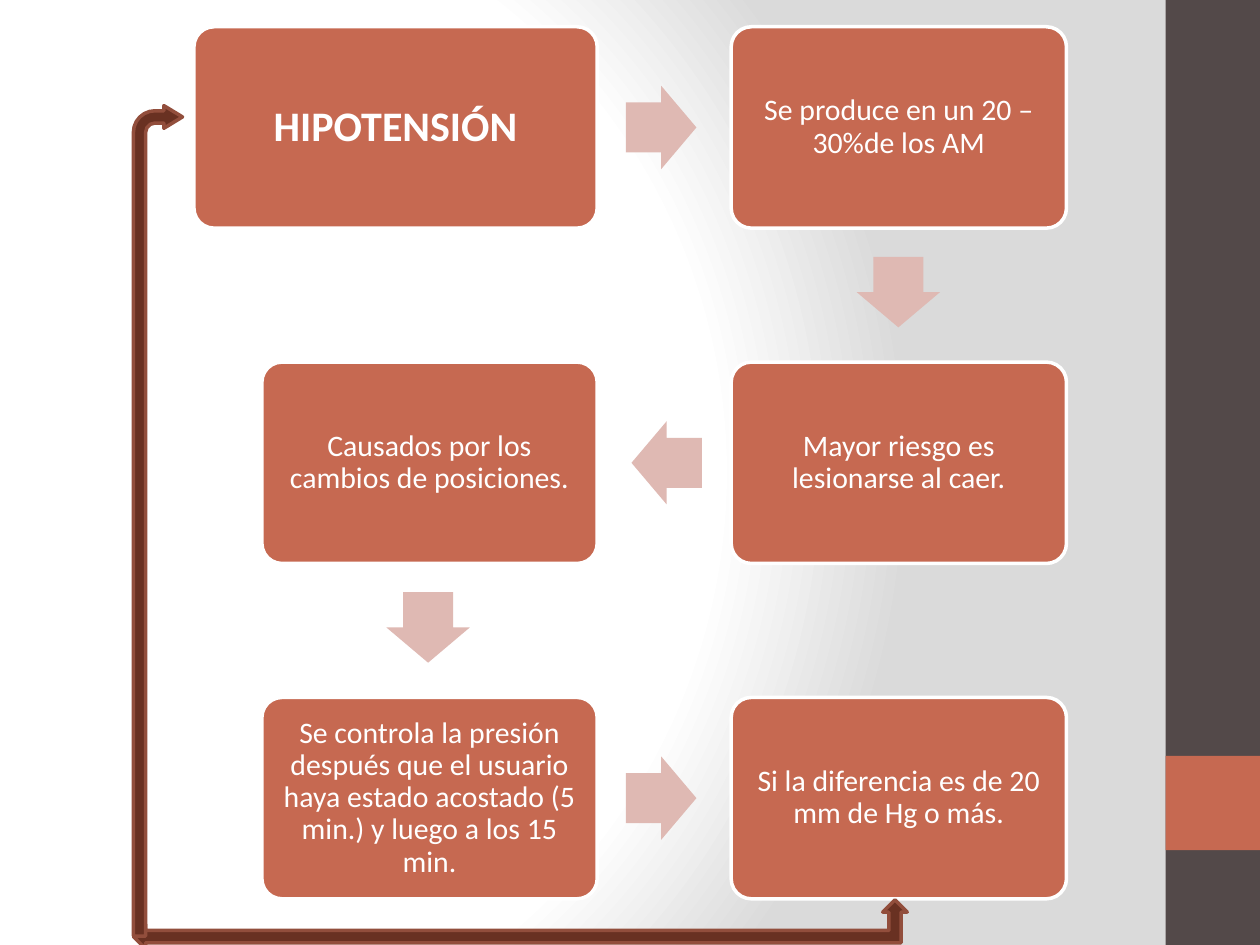
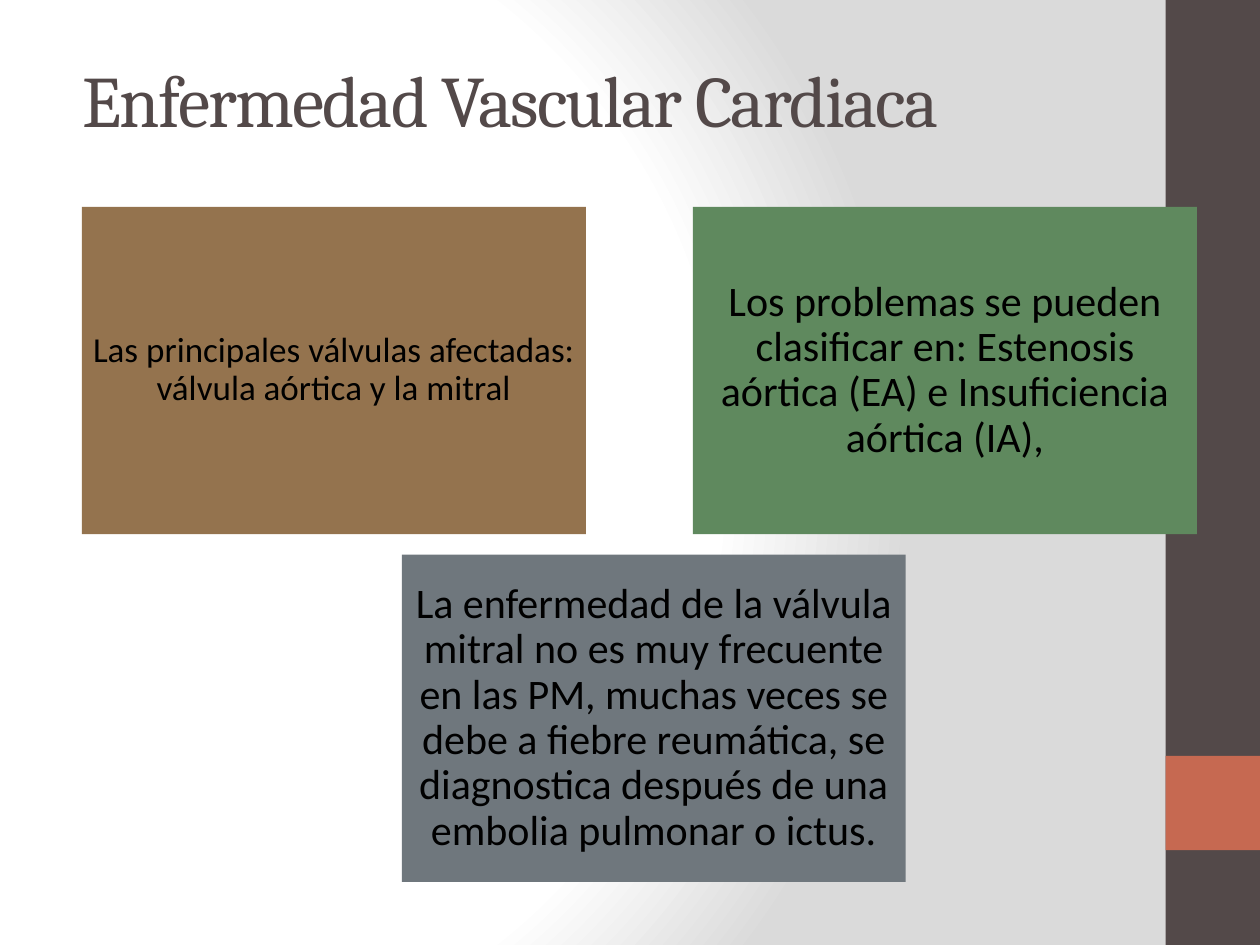
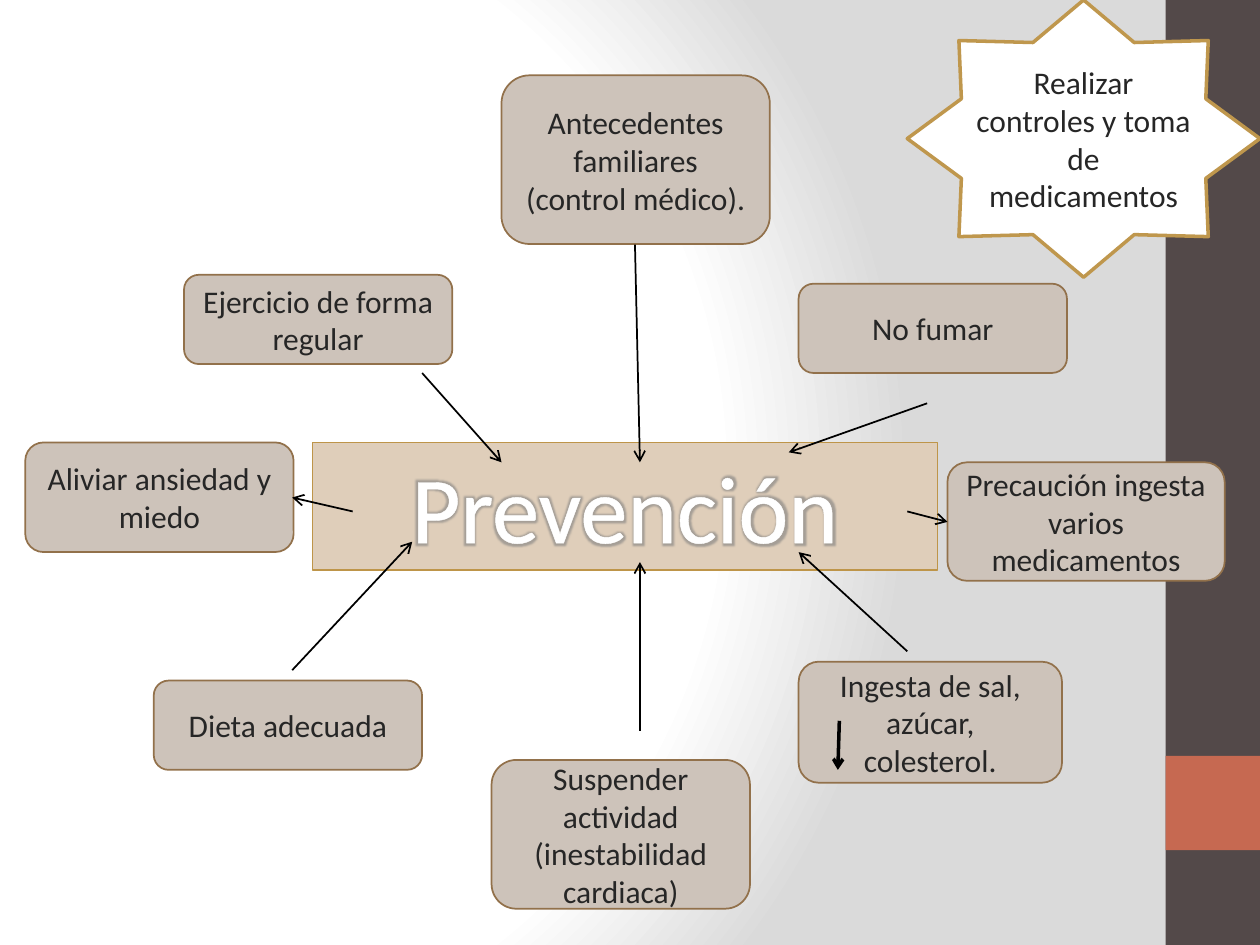
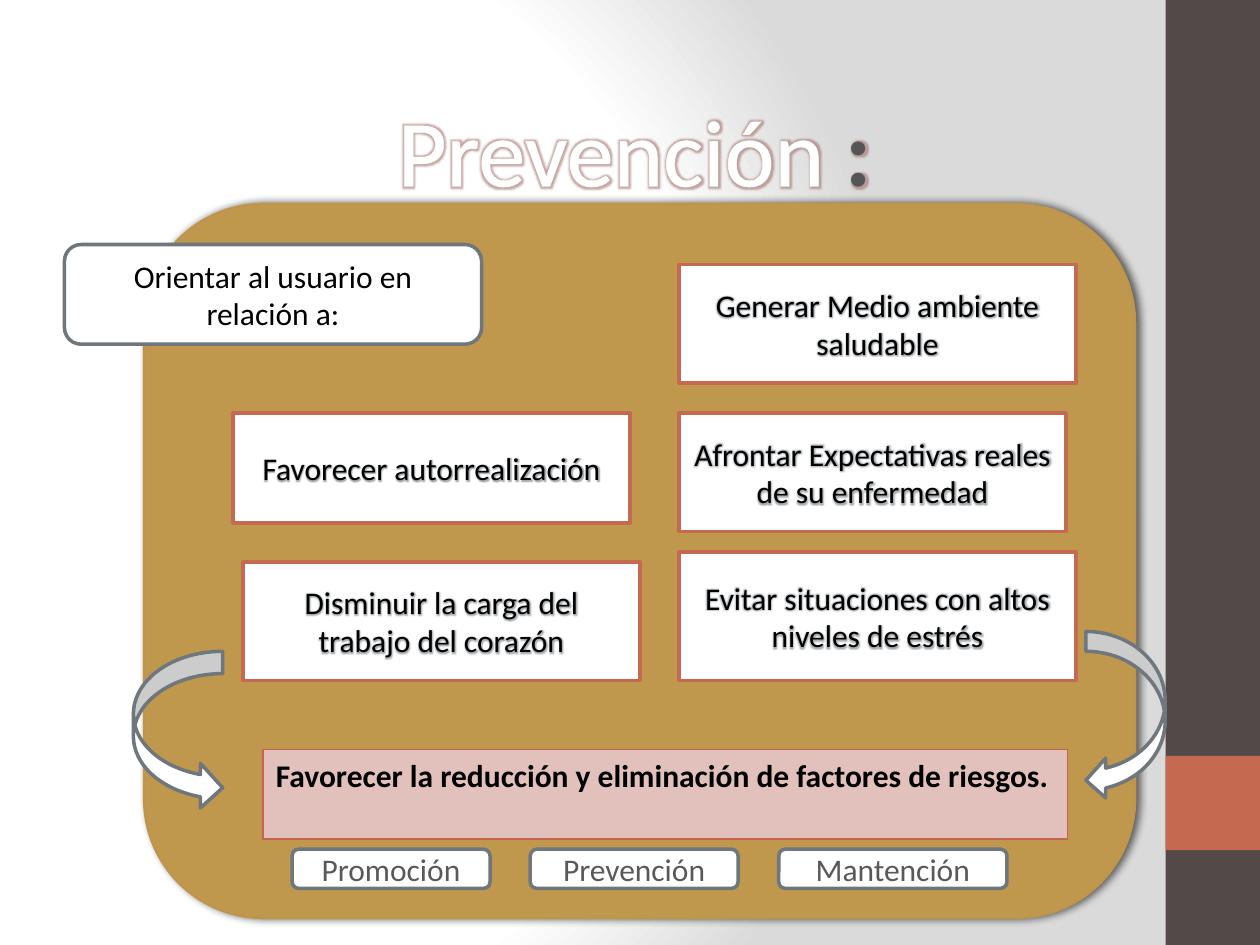
from dataclasses import dataclass, replace
from typing import NamedTuple, Optional

from lxml.etree import SubElement
from pptx import Presentation
from pptx.dml.color import RGBColor
from pptx.enum.shapes import MSO_CONNECTOR, MSO_SHAPE as Preset
from pptx.enum.text import MSO_ANCHOR as Anchor, PP_ALIGN as Align
from pptx.oxml import parse_xml
from pptx.oxml.ns import nsdecls, qn
from pptx.util import Cm, Pt

WHITE = RGBColor(0xFF, 0xFF, 0xFF)
BLACK = RGBColor(0, 0, 0)
INK = RGBColor(0x26, 0x26, 0x26)
GREY_INK = RGBColor(0x59, 0x59, 0x59)
COLON_GREY = RGBColor(0x55, 0x55, 0x55)
UMBER = RGBColor(0x53, 0x49, 0x49)
TERRACOTTA = RGBColor(0xC6, 0x69, 0x51)
PALE_TERRACOTTA = RGBColor(0xDF, 0xB9, 0xB3)
ROSE = RGBColor(0xE2, 0xC0, 0xBB)
ROSE_EDGE = RGBColor(0xC4, 0x65, 0x4C)
RUST = RGBColor(0x69, 0x31, 0x22)
RUST_EDGE = RGBColor(0x92, 0x4E, 0x3C)
BROWN = RGBColor(0x94, 0x73, 0x4E)
GREEN = RGBColor(0x5F, 0x89, 0x5E)
SLATE = RGBColor(0x6F, 0x77, 0x7D)
TAUPE = RGBColor(0xCD, 0xC3, 0xBA)
TAUPE_EDGE = RGBColor(0x92, 0x71, 0x4B)
SAND = RGBColor(0xDF, 0xCE, 0xBA)
GOLD = RGBColor(0xBF, 0x97, 0x4D)
GOLD_EDGE = RGBColor(0xBE, 0x95, 0x49)
GLOW_GREY = RGBColor(0x80, 0x80, 0x80)
GLOW_ROSE = RGBColor(0xA0, 0x70, 0x68)

BODY_FONT = "Calibri"
TITLE_FONT = "Cambria"
BLANK, TITLE_ONLY = 6, 5

BACKGROUND = f"""<p:bg {nsdecls('p', 'a')}><p:bgPr><a:gradFill rotWithShape="1"><a:gsLst>
<a:gs pos="0"><a:srgbClr val="{WHITE}"/></a:gs><a:gs pos="75000"><a:srgbClr val="{WHITE}"/></a:gs>
<a:gs pos="100000"><a:srgbClr val="DADADA"/></a:gs></a:gsLst><a:path path="circle">
<a:fillToRect l="20000" t="50000" r="100000" b="50000"/></a:path></a:gradFill>
<a:effectLst/></p:bgPr></p:bg>"""


class Area(NamedTuple):
    """A place on the slide in centimetres."""
    left: float
    top: float
    width: float
    height: float


class Arrow(NamedTuple):
    x1: float
    y1: float
    x2: float
    y2: float
    width: float = 1


@dataclass(frozen=True)
class Style:
    preset: Preset = Preset.RECTANGLE
    fill: Optional[RGBColor] = None
    edge: Optional[RGBColor] = None
    edge_width: float = 1
    adjustments: tuple[float, ...] = ()
    ink: RGBColor = BLACK
    size: float = 18
    bold: bool = False
    align: Align = Align.CENTER
    anchor: Anchor = Anchor.MIDDLE
    spacing: Optional[float] = None
    inset: Optional[float] = None
    glow: Optional[RGBColor] = None
    glow_radius: float = 4
    outlined: bool = False


STEP = Style(Preset.ROUNDED_RECTANGLE, TERRACOTTA, WHITE, 2, (0.1,), WHITE, 17,
             spacing=0.9, inset=0.18)
STEP_HEAD = replace(STEP, size=24, bold=True, inset=0.25)
STEP_ARROW = Style(Preset.RIGHT_ARROW, PALE_TERRACOTTA, adjustments=(0.6, 0.5))
RETURN_FOOT = Style(Preset.LEFT_UP_ARROW, RUST, RUST_EDGE, 2)
RETURN_RISE = replace(RETURN_FOOT, preset=Preset.BENT_ARROW,
                      adjustments=(0.25, 0.231, 0.379, 0.438))
VALVE = Style(size=24, spacing=0.9, inset=0.25)
MEASURE = Style(Preset.ROUNDED_RECTANGLE, TAUPE, TAUPE_EDGE, ink=INK)
CONTROL_STAR = Style(Preset.STAR_8_POINT, WHITE, GOLD, 2, ink=INK)
HEADLINE = Style(ink=WHITE, size=54, anchor=Anchor.TOP, glow=GLOW_ROSE, outlined=True)
BANNER = replace(HEADLINE, fill=SAND, edge=GOLD_EDGE, glow=GLOW_GREY)
PANEL = Style(Preset.ROUNDED_RECTANGLE, GOLD, GOLD_EDGE)
GOAL = Style(Preset.RECTANGLE, WHITE, TERRACOTTA, 2, glow=SLATE, glow_radius=3)
GUIDE = Style(Preset.ROUNDED_RECTANGLE, WHITE, SLATE, 2)
LEVEL = replace(GUIDE, ink=GREY_INK)
SUMMARY = Style(Preset.RECTANGLE, ROSE, ROSE_EDGE, bold=True, align=Align.JUSTIFY,
                anchor=Anchor.TOP)


def lengths(area: Area) -> list[Cm]:
    return [Cm(value) for value in area]


def add_colour(parent, colour: RGBColor, alpha: int):
    value = SubElement(parent, qn("a:srgbClr"), val=str(colour))
    SubElement(value, qn("a:alpha"), val=str(alpha * 1000))


def format_run(run, style: Style) -> None:
    font = run.font
    font.name, font.size, font.bold = BODY_FONT, Pt(style.size), style.bold
    font.color.rgb = style.ink
    properties = font.fill._xPr
    fill = properties.find(qn("a:solidFill"))
    if style.outlined:
        fill.addprevious(parse_xml(
            f'<a:ln {nsdecls("a")} w="18400"><a:solidFill><a:srgbClr val="{WHITE}"/>'
            '</a:solidFill></a:ln>'))
    if style.glow is not None:
        effects = parse_xml(f'<a:effectLst {nsdecls("a")}/>')
        halo = SubElement(effects, qn("a:glow"), rad=str(Pt(style.glow_radius)))
        add_colour(halo, style.glow, 60)
        fill.addnext(effects)


def write(shape, text: str, style: Style) -> None:
    frame = shape.text_frame
    frame.text = text
    frame.word_wrap = True
    frame.vertical_anchor = style.anchor
    if style.inset is not None:
        frame.margin_left = frame.margin_right = Cm(style.inset)
        frame.margin_top = frame.margin_bottom = Cm(style.inset)
    paragraph = frame.paragraphs[0]
    paragraph.alignment = style.align
    paragraph.line_spacing = style.spacing
    format_run(paragraph.runs[0], style)


def add_box(slide, area: Area, style: Style, text: str = "", rotation: float = 0):
    shape = slide.shapes.add_shape(style.preset, *lengths(area))
    shape.shadow.inherit = False
    shape.rotation = rotation
    for index, value in enumerate(style.adjustments):
        shape.adjustments[index] = value
    if style.fill is None:
        shape.fill.background()
    else:
        shape.fill.solid()
        shape.fill.fore_color.rgb = style.fill
    if style.edge is None:
        shape.line.fill.background()
    else:
        shape.line.color.rgb = style.edge
        shape.line.width = Pt(style.edge_width)
    if text:
        write(shape, text, style)
    return shape


def add_arrow(slide, arrow: Arrow) -> None:
    ends = [Cm(value) for value in arrow[:4]]
    connector = slide.shapes.add_connector(MSO_CONNECTOR.STRAIGHT, *ends)
    connector.line.color.rgb = BLACK
    connector.line.width = Pt(arrow.width)
    SubElement(connector.line._get_or_add_ln(), qn("a:tailEnd"), type="arrow")
    SubElement(connector.element.spPr, qn("a:effectLst"))


def add_slide(deck, layout: int):
    return deck.slides.add_slide(deck.slide_layouts[layout])


def dress_master(deck, slide) -> None:
    """Give the master its background and side bands, drawn first on a slide."""
    master = deck.slide_master
    common = master.element.cSld
    common.replace(common.find(qn("p:bg")), parse_xml(BACKGROUND))
    bands = ((Area(23.5, 0, 1.9, 19.05), UMBER), (Area(23.5, 15.24, 1.9, 1.9), TERRACOTTA))
    for index, (area, colour) in enumerate(bands):
        band = add_box(slide, area, Style(fill=colour)).element
        band.nvSpPr.cNvPr.set("id", str(100 + index))
        master.shapes.element.insert(2 + index, band)


def build_hypotension(slide) -> None:
    left, right = 5.28, 14.74
    width, height = 6.76, 4.06
    rows = [0.54 + 6.76 * row for row in range(3)]
    add_box(slide, Area(3.91, rows[0], 8.13, height), STEP_HEAD, "HIPOTENSIÓN")
    steps = (
        (right, 0, "Se produce en un 20 – 30%de los AM"),
        (right, 1, "Mayor riesgo es lesionarse al caer."),
        (left, 1, "Causados por los cambios de posiciones."),
        (left, 2, "Se controla la presión después que el usuario haya estado acostado "
                  "(5 min.) y luego a los 15 min."),
        (right, 2, "Si la diferencia es de 20 mm de Hg o más."),
    )
    for x, row, text in steps:
        add_box(slide, Area(x, rows[row], width, height), STEP, text)

    beside, below = 1.19, 4.51
    turns = ((12.62, rows[0] + beside, 0), (17.4, rows[0] + below, 90),
             (12.73, rows[1] + beside, 180), (7.92, rows[1] + below, 90),
             (12.62, rows[2] + beside, 0))
    for x, y, rotation in turns:
        add_box(slide, Area(x, y, 1.42, 1.68), STEP_ARROW, rotation=rotation)
    add_box(slide, Area(2.69, 18.14, 15.6, 0.99), RETURN_FOOT)
    add_box(slide, Area(2.69, 2.13, 0.99, 16.74), RETURN_RISE)


def build_valves(slide) -> None:
    title = slide.shapes.title
    title.left, title.top, title.width, title.height = lengths(Area(1.4, 0.99, 22.86, 2.01))
    title.text_frame.text = "Enfermedad Vascular Cardiaca"
    title.text_frame.vertical_anchor = Anchor.MIDDLE
    paragraph = title.text_frame.paragraphs[0]
    paragraph.alignment = Align.LEFT
    font = paragraph.runs[0].font
    font.name, font.size = TITLE_FONT, Pt(41.4)
    font.color.rgb = UMBER
    font.fill._xPr.set("spc", "-100")

    cards = (
        (1.65, 4.17, replace(VALVE, fill=BROWN, size=20, inset=0.2),
         "Las principales válvulas afectadas: válvula aórtica y la mitral"),
        (13.97, 4.17, replace(VALVE, fill=GREEN),
         "Los problemas se pueden clasificar en: Estenosis aórtica (EA) e "
         "Insuficiencia aórtica (IA),"),
        (8.1, 11.18, replace(VALVE, fill=SLATE),
         "La enfermedad de la válvula mitral no es muy frecuente en las PM, muchas "
         "veces se debe a fiebre reumática, se diagnostica después de una embolia "
         "pulmonar o ictus."),
    )
    for x, y, style, text in cards:
        add_box(slide, Area(x, y, 10.16, 6.6), style, text)


def build_prevention_map(slide) -> None:
    measures = (
        (Area(16.1, 5.72, 5.41, 1.8), "No fumar"),
        (Area(3.71, 5.54, 5.41, 1.8), "Ejercicio de forma regular"),
        (Area(3.1, 13.72, 5.41, 1.8), "Dieta adecuada"),
        (Area(16.1, 13.34, 5.31, 2.44), "Ingesta de sal, azúcar, colesterol."),
        (Area(19.1, 9.32, 5.59, 2.39), "Precaución ingesta varios medicamentos"),
        (Area(9.91, 15.32, 5.21, 3), "Suspender actividad (inestabilidad cardiaca)"),
        (Area(0.51, 8.92, 5.41, 2.21), "Aliviar ansiedad y miedo"),
        (Area(10.11, 1.52, 5.41, 3.4), "Antecedentes familiares (control médico)."),
    )
    for area, text in measures:
        add_box(slide, area, MEASURE, text)
    add_box(slide, Area(6.3, 8.92, 12.6, 2.57), BANNER, "Prevención")
    add_box(slide, Area(18.29, 0, 7.11, 5.59), CONTROL_STAR,
            "Realizar controles y toma de medicamentos")
    arrows = (
        Arrow(16.92, 14.53, 16.89, 15.52, 2),
        Arrow(12.8, 4.93, 12.9, 9.32),
        Arrow(18.69, 8.13, 15.9, 9.12),
        Arrow(8.51, 7.52, 10.11, 9.32),
        Arrow(5.89, 13.51, 8.31, 10.92),
        Arrow(12.9, 14.73, 12.9, 11.33),
        Arrow(18.29, 13.13, 16.1, 11.13),
        Arrow(18.29, 10.31, 19.1, 10.52),
        Arrow(7.11, 10.31, 5.89, 10.03),
    )
    for arrow in arrows:
        add_arrow(slide, arrow)


def build_prevention_goals(slide) -> None:
    panel = add_box(slide, Area(2.9, 4.11, 19.99, 14.4), PANEL)
    shadow = SubElement(panel.element.spPr.find(qn("a:effectLst")), qn("a:outerShdw"),
                        blurRad=str(Pt(4)), dist=str(Pt(2)), dir="0")
    add_colour(shadow, BLACK, 60)

    headline = slide.shapes.add_textbox(*lengths(Area(6.5, 1.73, 12.6, 2.57)))
    write(headline, "Prevención ", HEADLINE)
    colon = headline.text_frame.paragraphs[0].add_run()
    colon.text = ":"
    format_run(colon, replace(HEADLINE, ink=COLON_GREY, bold=True))

    goals = (
        (Area(13.69, 5.33, 8, 2.39), "Generar Medio ambiente saludable"),
        (Area(13.69, 8.33, 7.8, 2.39), "Afrontar Expectativas reales de su enfermedad"),
        (Area(13.69, 11.13, 8, 2.59), "Evitar situaciones con altos niveles de estrés"),
        (Area(4.7, 8.33, 8, 2.21), "Favorecer autorrealización"),
        (Area(4.9, 11.33, 8, 2.39), "Disminuir la carga del trabajo del corazón"),
    )
    for area, text in goals:
        add_box(slide, area, GOAL, text)
    add_box(slide, Area(1.3, 4.93, 8.41, 2.01), GUIDE, "Orientar al usuario en relación a:")
    add_box(slide, Area(5.31, 15.11, 16.21, 1.8), SUMMARY,
            "Favorecer la reducción y eliminación de factores de riesgos.")
    add_box(slide, Area(2.69, 13.13, 1.8, 3.2), replace(GUIDE, preset=Preset.CURVED_RIGHT_ARROW))
    add_box(slide, Area(21.89, 12.73, 1.6, 3.4), replace(GUIDE, preset=Preset.CURVED_LEFT_ARROW))
    levels = ((5.89, 3.99, "Promoción"), (10.69, 4.19, "Prevención"), (15.7, 4.6, "Mantención"))
    for x, width, text in levels:
        add_box(slide, Area(x, 17.12, width, 0.79), LEVEL, text)


def main() -> None:
    deck = Presentation()
    deck.slide_width, deck.slide_height = Cm(25.4), Cm(19.05)
    hypotension = add_slide(deck, BLANK)
    dress_master(deck, hypotension)
    build_hypotension(hypotension)
    build_valves(add_slide(deck, TITLE_ONLY))
    build_prevention_map(add_slide(deck, BLANK))
    build_prevention_goals(add_slide(deck, BLANK))
    deck.save("out.pptx")


if __name__ == "__main__":
    main()
